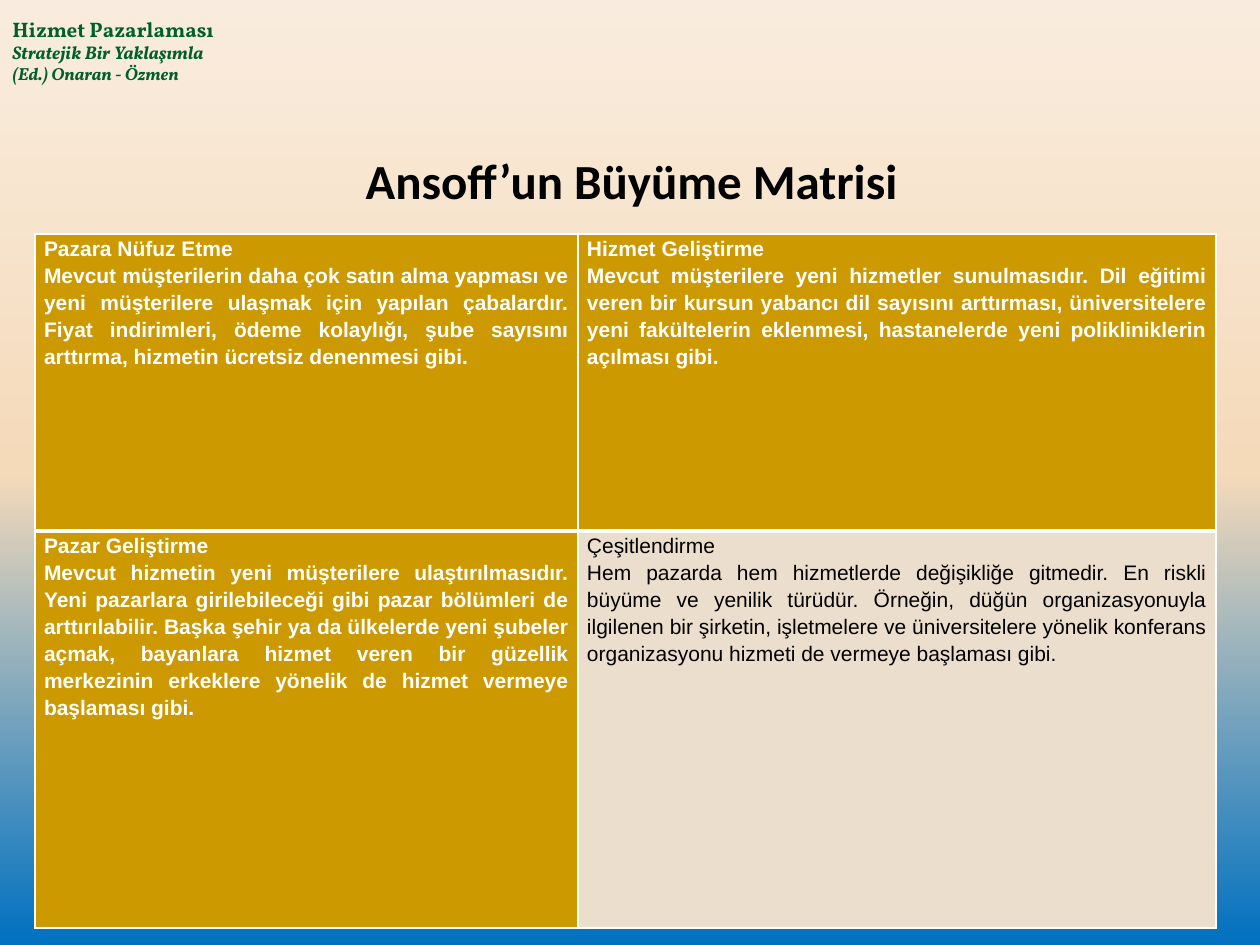
from copy import deepcopy

from lxml import etree
from pptx import Presentation
from pptx.dml.color import RGBColor
from pptx.enum.text import MSO_ANCHOR, PP_ALIGN
from pptx.oxml.ns import qn
from pptx.util import Emu, Pt

CENTER, JUSTIFY = PP_ALIGN.CENTER, PP_ALIGN.JUSTIFY
BOTTOM = MSO_ANCHOR.BOTTOM
SCALE = 914400 / 126
TITLE_ONLY = 5


def px(length):
    return Emu(round(length * SCALE))


def format_font(font, color, **values):
    font.color.rgb = RGBColor.from_string(color)
    for name, value in values.items():
        setattr(font, name, value)


presentation = Presentation()
presentation.slide_width, presentation.slide_height = px(1260), px(945)
slide = presentation.slides.add_slide(presentation.slide_layouts[TITLE_ONLY])

# Background gradient, running from the bottom up
background = slide.background.fill
background.gradient()
background.gradient_angle = 90
stop_list = slide.element.find(".//" + qn("a:gsLst"))
stop_list.append(deepcopy(stop_list[0]))
gradient = [(0, "0070C0"), (0.5, "F5DABA"), (1, "F9ECDE")]
for stop, (position, color) in zip(background.gradient_stops, gradient):
    stop.position = position
    stop.color.rgb = RGBColor.from_string(color)

# Book heading
heading = slide.shapes.add_textbox(px(0), px(10), px(354), px(82)).text_frame
heading.word_wrap = True
heading_lines = [
    ("Hizmet Pazarlaması", 12, False),
    ("Stratejik Bir Yaklaşımla", 10.5, True),
    ("(Ed.) Onaran - Özmen", 10, True),
]
heading.text = "\n".join(line[0] for line in heading_lines)
for paragraph, (_, size, italic) in zip(heading.paragraphs, heading_lines):
    format_font(paragraph.runs[0].font, "00602B", name="Vollkorn",
                size=Pt(size), bold=True, italic=italic)

# Title
title = slide.shapes.title
title.left, title.top, title.width, title.height = px(164), px(116), px(935), px(100)
title.text_frame.text = "Ansoff’un Büyüme Matrisi"
title.text_frame.vertical_anchor = BOTTOM
paragraph = title.text_frame.paragraphs[0]
paragraph.alignment = CENTER
format_font(paragraph.runs[0].font, "000000", name="Calibri", size=Pt(28), bold=True)

# Growth matrix: heading, description, fill, text colour, bold
GOLD = ("CC9900", "FFFFFF", True)
SAND = ("ECDECC", "000000", False)
matrix = [
    [
        ("Pazara Nüfuz Etme",
         "Mevcut müşterilerin daha çok satın alma yapması ve yeni müşterilere "
         "ulaşmak için yapılan çabalardır. Fiyat indirimleri, ödeme kolaylığı, "
         "şube sayısını arttırma, hizmetin ücretsiz denenmesi gibi.", *GOLD),
        ("Hizmet Geliştirme",
         "Mevcut müşterilere yeni hizmetler sunulmasıdır. Dil eğitimi veren bir "
         "kursun yabancı dil sayısını arttırması, üniversitelere yeni fakültelerin "
         "eklenmesi, hastanelerde yeni polikliniklerin açılması gibi.", *GOLD),
    ],
    [
        ("Pazar Geliştirme",
         "Mevcut hizmetin yeni müşterilere ulaştırılmasıdır. Yeni pazarlara "
         "girilebileceği gibi pazar bölümleri de arttırılabilir. Başka şehir ya da "
         "ülkelerde yeni şubeler açmak, bayanlara hizmet veren bir güzellik "
         "merkezinin erkeklere yönelik de hizmet vermeye başlaması gibi.", *GOLD),
        ("Çeşitlendirme",
         "Hem pazarda hem hizmetlerde değişikliğe gitmedir. En riskli büyüme ve "
         "yenilik türüdür. Örneğin, düğün organizasyonuyla ilgilenen bir şirketin, "
         "işletmelere ve üniversitelere yönelik konferans organizasyonu hizmeti de "
         "vermeye başlaması gibi.", *SAND),
    ],
]
column_widths, row_heights = (543, 638), (297, 397)
table = slide.shapes.add_table(2, 2, px(35), px(234), px(sum(column_widths)),
                               px(sum(row_heights))).table
for column, width in zip(table.columns, column_widths):
    column.width = px(width)
for row, height in zip(table.rows, row_heights):
    row.height = px(height)

# The border between the rows is heavier than the others
row_borders = [
    {"lnL": 1, "lnR": 1, "lnT": 1, "lnB": 3},
    {"lnL": 1, "lnR": 1, "lnT": 3, "lnB": 1},
]
for row, contents, borders in zip(table.rows, matrix, row_borders):
    for cell, (name, description, fill, color, bold) in zip(row.cells, contents):
        cell.margin_left = cell.margin_right = px(9)
        cell.margin_top = cell.margin_bottom = 0
        properties = cell._tc.get_or_add_tcPr()
        for side, width in borders.items():
            line = etree.SubElement(properties, qn("a:" + side), w=str(Pt(width)))
            line_fill = etree.SubElement(line, qn("a:solidFill"))
            etree.SubElement(line_fill, qn("a:srgbClr"), val="FFFFFF")
        cell.fill.solid()
        cell.fill.fore_color.rgb = RGBColor.from_string(fill)
        cell.text = f"{name}\n{description}"
        for paragraph in cell.text_frame.paragraphs:
            paragraph.alignment = JUSTIFY
            paragraph.line_spacing = 1.15
            format_font(paragraph.runs[0].font, color, name="Arial",
                        size=Pt(12), bold=bold)

presentation.save("out.pptx")
